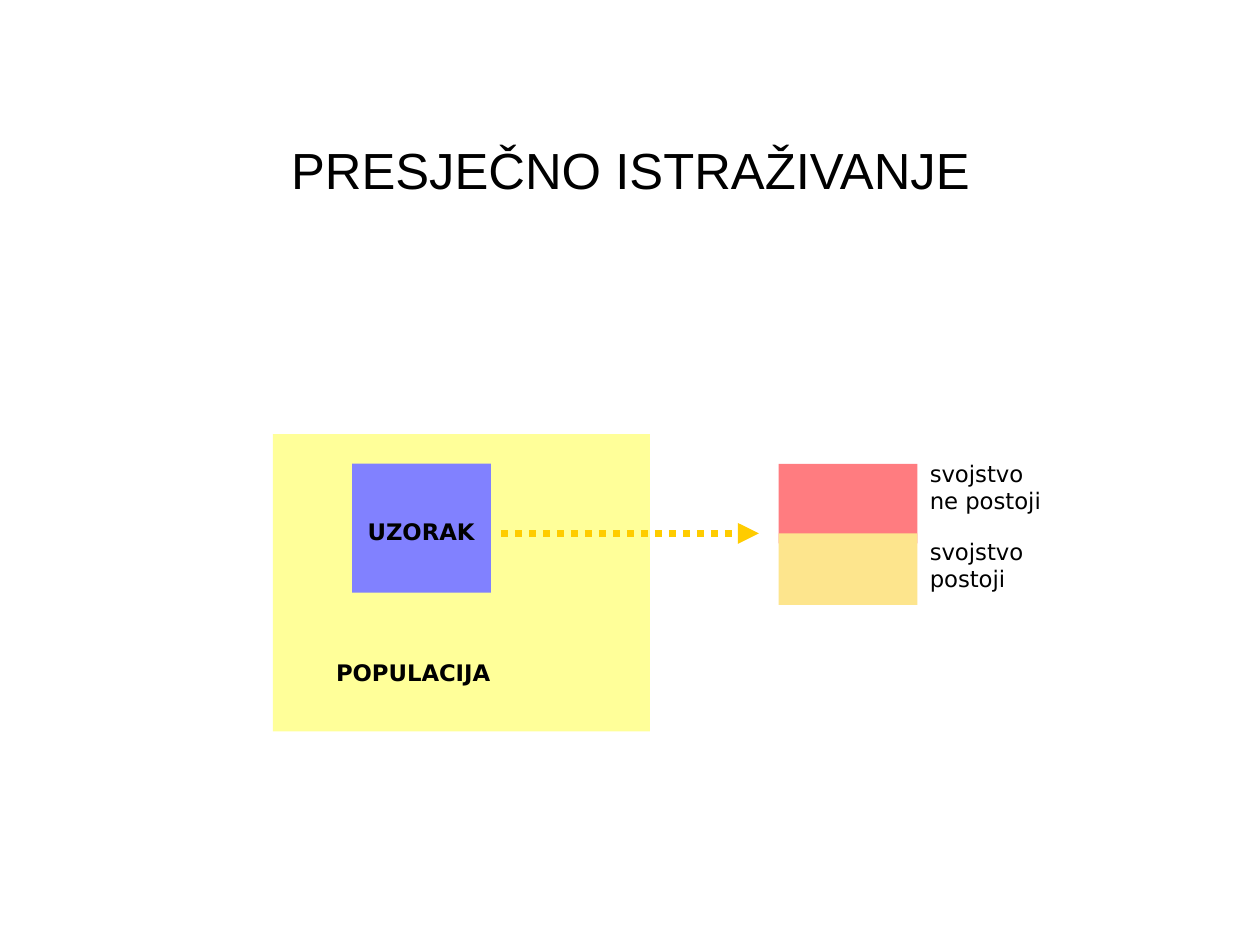
"""Build a slide that diagrams a cross-sectional study."""
from lxml import etree
from pptx import Presentation
from pptx.dml.color import RGBColor
from pptx.enum.dml import MSO_LINE
from pptx.enum.shapes import MSO_CONNECTOR, MSO_SHAPE
from pptx.enum.text import MSO_ANCHOR, PP_ALIGN
from pptx.oxml.ns import qn
from pptx.util import Pt

STRAIGHT = MSO_CONNECTOR.STRAIGHT
RECTANGLE = MSO_SHAPE.RECTANGLE
TOP = MSO_ANCHOR.TOP
CENTER = PP_ALIGN.CENTER
JUSTIFY = PP_ALIGN.JUSTIFY
DOTTED = MSO_LINE.ROUND_DOT

COLORS = {
    "text": "000000",
    "population": "FFFF99",
    "sample": "8181FF",
    "arrow": "FFCC00",
    "absent": "FF7C80",
    "present": "FDE58D",
}


def write_text(shape, text, size=13, font="DejaVu Sans", bold=False, align=JUSTIFY, inset=3.6):
    frame = shape.text_frame
    frame.word_wrap = True
    frame.vertical_anchor = TOP
    frame.margin_top = Pt(inset)
    frame.text = text
    for paragraph in frame.paragraphs:
        paragraph.alignment = align
        for run in paragraph.runs:
            run.font.name = font
            run.font.size = Pt(size)
            run.font.bold = bold
            run.font.color.rgb = RGBColor.from_string(COLORS["text"])


presentation = Presentation()
presentation.slide_width, presentation.slide_height = Pt(720), Pt(540)
slide = presentation.slides.add_slide(presentation.slide_layouts[5])

title = slide.shapes.title
title.left, title.top, title.width, title.height = Pt(150.5), Pt(65.5), Pt(420), Pt(105)
write_text(title, "PRESJEČNO ISTRAŽIVANJE", size=29, font="Arial", align=CENTER, inset=13.5)

blocks = [
    ("population", 155.9, 248, 215.5, 170),
    ("sample", 201.2, 265, 79.3, 73.7),
    ("absent", 445, 265, 79.3, 45.5),
    ("present", 445, 304.8, 79.3, 40.9),
]
for name, left, top, width, height in blocks:
    block = slide.shapes.add_shape(RECTANGLE, Pt(left), Pt(top), Pt(width), Pt(height))
    block.shadow.inherit = False
    block.fill.solid()
    block.fill.fore_color.rgb = RGBColor.from_string(COLORS[name])
    block.line.fill.background()

arrow = slide.shapes.add_connector(STRAIGHT, Pt(286.3), Pt(304.8), Pt(433.6), Pt(304.8))
arrow.line.width = Pt(4)
arrow.line.color.rgb = RGBColor.from_string(COLORS["arrow"])
arrow.line.dash_style = DOTTED
properties = arrow.element.spPr
etree.SubElement(properties.find(qn("a:ln")), qn("a:tailEnd"), type="triangle")
etree.SubElement(properties, qn("a:effectLst"))

labels = [
    ("svojstvo\nne postoji", 524.2, 259.2, 85, 38.2, False),
    ("svojstvo postoji", 524.2, 303.8, 85, 38.2, False),
    ("UZORAK", 203, 292.3, 85, 23, True),
    ("POPULACIJA", 185, 373, 139, 23, True),
]
for text, left, top, width, height, bold in labels:
    label = slide.shapes.add_textbox(Pt(left), Pt(top), Pt(width), Pt(height))
    write_text(label, text, bold=bold)

presentation.save("out.pptx")
